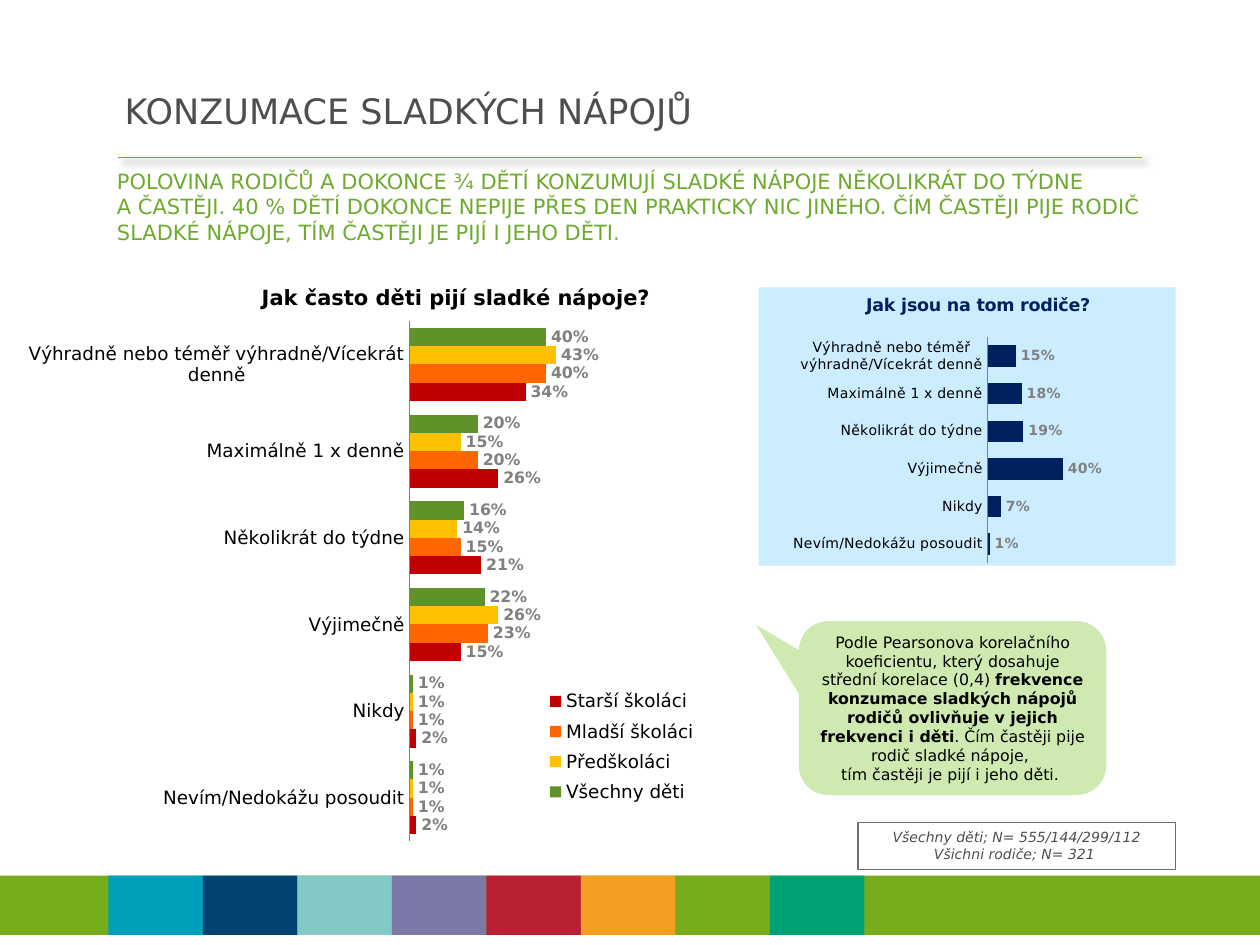
from dataclasses import dataclass

from lxml import etree
from pptx import Presentation
from pptx import util as u
from pptx.chart.data import CategoryChartData
from pptx.dml.color import RGBColor
from pptx.enum import chart as ch
from pptx.enum import shapes, text
from pptx.oxml import parse_xml
from pptx.oxml.ns import nsdecls, qn


@dataclass(frozen=True)
class Theme:
    font: str = "DejaVu Sans"
    black: str = "000000"
    heading: str = "4E4E4E"
    claim: str = "6EAA2E"
    green: str = "77AD1C"
    navy: str = "002060"
    value: str = "808080"
    panel: str = "CCECFF"
    bubble: str = "CEEAB0"
    border: str = "6E6E6E"
    title_size: float = 20
    claim_size: float = 12
    body_size: float = 9
    note_size: float = 8


THEME = Theme()
CENTER = text.PP_ALIGN.CENTER
MIDDLE = text.MSO_ANCHOR.MIDDLE


class SlideBuilder:
    def __init__(self, slide, theme):
        self.slide = slide
        self.theme = theme

    def style(self, font, size, color, bold=None, italic=None):
        font.name = self.theme.font
        font.size = u.Pt(size)
        font.color.rgb = RGBColor.from_string(color)
        font.bold, font.italic = bold, italic

    def add_text(self, shape, paragraphs, size, color, align=None, anchor=None, italic=None):
        frame = shape.text_frame
        frame.word_wrap = True
        if anchor is not None:
            frame.vertical_anchor = anchor
        for index, runs in enumerate(paragraphs):
            paragraph = frame.add_paragraph() if index else frame.paragraphs[0]
            paragraph.alignment = align
            self.style(paragraph.font, size, color, italic=italic)
            for words, bold in runs:
                for number, line in enumerate(words.split("\n")):
                    if number:
                        paragraph.add_line_break()
                    run = paragraph.add_run()
                    run.text = line
                    if bold:
                        run.font.bold = True

    def textbox(self, box, words, size, color, anchor=None):
        shape = self.slide.shapes.add_textbox(*map(u.Inches, box))
        self.add_text(shape, [[(words, False)]], size, color, anchor=anchor)

    def shape(self, kind, box, fill=None, line=None):
        shape = self.slide.shapes.add_shape(kind, *map(u.Inches, box))
        shape.shadow.inherit = False
        if fill:
            shape.fill.solid()
            shape.fill.fore_color.rgb = RGBColor.from_string(fill)
        else:
            shape.fill.background()
        if line:
            shape.line.color.rgb = RGBColor.from_string(line)
            shape.line.width = u.Pt(0.75)
        else:
            shape.line.fill.background()
        return shape

    def rule(self, left, right, top, color):
        ends = map(u.Inches, (left, top, right, top))
        rule = self.slide.shapes.add_connector(shapes.MSO_CONNECTOR.STRAIGHT, *ends)
        rule.line.color.rgb = RGBColor.from_string(color)
        rule.line.width = u.Pt(0.75)
        rule._element.spPr.append(parse_xml(
            f'<a:effectLst {nsdecls("a")}>'
            '<a:outerShdw blurRad="50800" dist="38100" dir="2700000" algn="tl" rotWithShape="0">'
            '<a:srgbClr val="000000"><a:alpha val="40000"/></a:srgbClr>'
            '</a:outerShdw></a:effectLst>'))

    def place(self, part, x, y, w=None, h=None, inner=False):
        for old in part.findall(qn("c:layout")):
            part.remove(old)
        layout = etree.Element(qn("c:layout"))
        manual = etree.SubElement(layout, qn("c:manualLayout"))
        settings = [("layoutTarget", "inner" if inner else None), ("xMode", "edge"),
                    ("yMode", "edge"), ("x", x), ("y", y), ("w", w), ("h", h)]
        for tag, value in settings:
            if value is not None:
                etree.SubElement(manual, qn(f"c:{tag}")).set("val", str(value))
        before = [part.find(qn(f"c:{tag}")) for tag in ("tx", "legendPos")]
        anchor = next((node for node in before if node is not None), None)
        if anchor is None:
            part.insert(0, layout)
        else:
            anchor.addnext(layout)

    def bar_chart(self, box, title, title_spot, title_size, title_color, categories, series,
                  plot_spot, label_size, value_size, panel=None, legend_spot=None):
        data = CategoryChartData(number_format="0%")
        data.categories = categories
        for name, values, _ in series:
            data.add_series(name, values)
        chart = self.slide.shapes.add_chart(
            ch.XL_CHART_TYPE.BAR_CLUSTERED, *map(u.Inches, box), data).chart
        self.style(chart.font, label_size, self.theme.black)

        chart.has_title = True
        heading = chart.chart_title.text_frame.paragraphs[0]
        heading.text = title
        self.style(heading.font, title_size, title_color, bold=True)
        chart.chart_title.include_in_layout = False
        space = chart._chartSpace
        self.place(space.chart.find(qn("c:title")), *title_spot)
        self.place(space.chart.plotArea, *plot_spot, inner=True)

        axis = chart.category_axis
        axis.reverse_order = True
        axis.major_tick_mark = ch.XL_TICK_MARK.NONE
        axis.format.line.color.rgb = RGBColor.from_string(self.theme.value)
        self.style(axis.tick_labels.font, label_size, self.theme.black)
        scale = chart.value_axis
        scale.minimum_scale, scale.maximum_scale = 0, 1
        scale.has_major_gridlines = False
        scale.visible = False

        bars = chart.plots[0]
        bars.gap_width, bars.overlap = 75, 0
        bars.vary_by_categories = False
        for group, (_, _, color) in zip(bars.series, series):
            group.format.fill.solid()
            group.format.fill.fore_color.rgb = RGBColor.from_string(color)
            labels = group.data_labels
            labels.show_value = True
            labels.number_format = "0%"
            labels.number_format_is_linked = False
            labels.position = ch.XL_LABEL_POSITION.OUTSIDE_END
            self.style(labels.font, value_size, self.theme.value, bold=True)

        chart.has_legend = legend_spot is not None
        if legend_spot:
            chart.legend.position = ch.XL_LEGEND_POSITION.RIGHT
            chart.legend.include_in_layout = False
            self.style(chart.legend.font, label_size, self.theme.black)
            self.place(space.chart.find(qn("c:legend")), *legend_spot)
        if panel:
            space.find(qn("c:txPr")).addprevious(parse_xml(
                f'<c:spPr {nsdecls("c", "a")}><a:solidFill><a:srgbClr val="{panel}"/>'
                '</a:solidFill><a:ln><a:noFill/></a:ln></c:spPr>'))


def main():
    deck = Presentation()
    deck.slide_width, deck.slide_height = u.Inches(10), u.Inches(7.5)
    page = SlideBuilder(deck.slides.add_slide(deck.slide_layouts[6]), THEME)
    rectangle = shapes.MSO_SHAPE.RECTANGLE

    page.rule(0.94, 9.06, 1.25, THEME.green)
    page.shape(rectangle, (0, 6.95, 10, 0.47), THEME.green)
    stripes = ["009FBB", "004272", "83C9C6", "7C78A8", "B92032", "F49F22", THEME.green, "00A275"]
    for index, color in enumerate(stripes):
        page.shape(rectangle, (0.86 + index * 0.75, 6.95, 0.75, 0.47), color)

    page.textbox((0.89, 0.62, 8.87, 0.51), "KONZUMACE SLADKÝCH NÁPOJŮ",
                 THEME.title_size, THEME.heading, MIDDLE)
    page.textbox((0.83, 1.29, 8.82, 0.55),
                 "POLOVINA RODIČŮ A DOKONCE ¾ DĚTÍ KONZUMUJÍ SLADKÉ NÁPOJE NĚKOLIKRÁT DO TÝDNE \n"
                 "A ČASTĚJI. 40 % DĚTÍ DOKONCE NEPIJE PŘES DEN PRAKTICKY NIC JINÉHO. "
                 "ČÍM ČASTĚJI PIJE RODIČ SLADKÉ NÁPOJE, TÍM ČASTĚJI JE PIJÍ I JEHO DĚTI.",
                 THEME.claim_size, THEME.claim)

    frequencies = ["Výhradně nebo téměř výhradně/Vícekrát denně", "Maximálně 1 x denně",
                   "Několikrát do týdne", "Výjimečně", "Nikdy", "Nevím/Nedokážu posoudit"]
    children = [("Všechny děti", (0.4, 0.2, 0.16, 0.22, 0.01, 0.01), "5F9329"),
                ("Předškoláci", (0.43, 0.15, 0.14, 0.26, 0.01, 0.01), "FFC000"),
                ("Mladší školáci", (0.4, 0.2, 0.15, 0.23, 0.01, 0.01), "FF6600"),
                ("Starší školáci", (0.34, 0.26, 0.21, 0.15, 0.02, 0.02), "C00000")]
    parents = [("Series 1", (0.15, 0.18, 0.19, 0.4, 0.07, 0.01), THEME.navy)]
    page.bar_chart((0, 2.08, 6.02, 4.69), "Jak často děti pijí sladké nápoje?", (0.34, 0.03),
                   12, THEME.black, frequencies, children, (0.54, 0.1, 0.45, 0.88),
                   10.5, 9, legend_spot=(0.72, 0.71, 0.2, 0.22))
    page.bar_chart((6.02, 2.28, 3.31, 2.21), "Jak jsou na tom rodiče?", (0.25, 0.01),
                   10, THEME.navy, frequencies, parents, (0.55, 0.18, 0.45, 0.81),
                   8, 8, panel=THEME.panel)

    finding = page.shape(shapes.MSO_SHAPE.ROUNDED_RECTANGULAR_CALLOUT,
                         (6.34, 4.93, 2.44, 1.38), THEME.bubble)
    for index, value in enumerate((-0.64, -0.48, 0.17)):
        finding.adjustments[index] = value
    page.add_text(finding, [[
        ("Podle Pearsonova korelačního koeficientu, který dosahuje střední korelace (0,4) ", False),
        ("frekvence konzumace sladkých nápojů rodičů ovlivňuje v jejich frekvenci i děti", True),
        (". Čím častěji pije rodič sladké nápoje, \ntím častěji je pijí i jeho děti. ", False),
    ]], THEME.body_size, THEME.black, CENTER, MIDDLE)

    sample = page.shape(rectangle, (6.81, 6.53, 2.52, 0.37), line=THEME.border)
    page.add_text(sample, [[("Všechny děti; N= 555/144/299/112", False)],
                           [("Všichni rodiče; N= 321 ", False)]],
                  THEME.note_size, THEME.heading, CENTER, text.MSO_ANCHOR.TOP, italic=True)
    sample.text_frame.auto_size = text.MSO_AUTO_SIZE.SHAPE_TO_FIT_TEXT

    deck.save("out.pptx")


if __name__ == "__main__":
    main()
